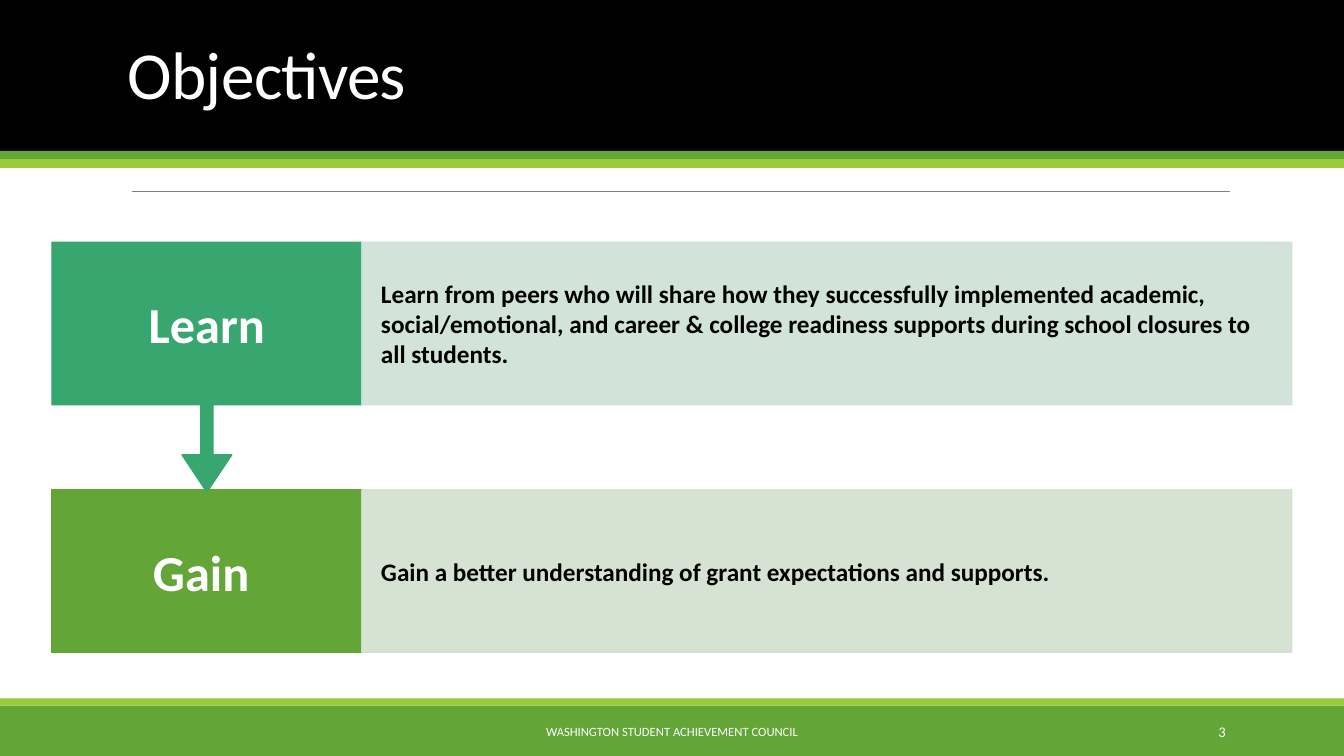
from pptx import Presentation
from pptx import util as u
from pptx.dml.color import RGBColor
from pptx.enum import shapes, text
from pptx.oxml import parse_xml
from pptx.oxml.ns import nsdecls, qn

BLACK, WHITE, GREEN, LIME, TEAL = "000000", "FFFFFF", "63A537", "99CB38", "37A76F"


def rgb(value):
    return RGBColor.from_string(value)


class Deck:
    """Style and current slide; all boxes are percentages of the slide size."""

    font = "Calibri"
    width, height = u.Inches(13.333), u.Inches(7.5)

    def __init__(self):
        self.prs = Presentation()
        self.prs.slide_width, self.prs.slide_height = self.width, self.height
        self.s = self.prs.slides.add_slide(self.prs.slide_layouts[5])

    def box(self, x, y, w, h):
        return [int(share * side / 100) for share, side in
                zip((x, y, w, h), (self.width, self.height) * 2)]

    def set_text(self, shape, words, size, color=WHITE, bold=False,
                 align="LEFT", inset=(0.1, 0.05), **spacing):
        tf = shape.text_frame
        frame = {"word_wrap": True, "auto_size": text.MSO_AUTO_SIZE.NONE,
                 "vertical_anchor": text.MSO_ANCHOR.MIDDLE,
                 "margin_left": u.Inches(inset[0]), "margin_right": u.Inches(inset[0]),
                 "margin_top": u.Inches(inset[1]), "margin_bottom": u.Inches(inset[1])}
        for name, value in frame.items():
            setattr(tf, name, value)
        p = tf.paragraphs[0]
        for name, value in {"alignment": getattr(text.PP_ALIGN, align), **spacing}.items():
            setattr(p, name, value)
        r = p.add_run()
        r.text = words
        for name, value in {"name": self.font, "size": u.Pt(size), "bold": bold}.items():
            setattr(r.font, name, value)
        r.font.color.rgb = rgb(color)
        return r

    def shape(self, place, color, kind="RECTANGLE", line=0, opacity=100):
        sp = self.s.shapes.add_shape(getattr(shapes.MSO_SHAPE, kind), *self.box(*place))
        sp.shadow.inherit = False
        sp.fill.solid()
        sp.fill.fore_color.rgb = rgb(color)
        if line:
            sp.line.width = u.Pt(line)
            sp.line.color.rgb = rgb(color)
        else:
            sp.line.fill.background()
        if opacity < 100:
            for clr in sp._element.spPr.iter(qn("a:srgbClr")):
                clr.append(parse_xml(f'<a:alpha {nsdecls("a")} val="{opacity * 1000}"/>'))
        return sp

    def rule(self, x1, x2, y, color, weight):
        left, top, right, _ = self.box(x1, y, x2, y)
        line = self.s.shapes.add_connector(shapes.MSO_CONNECTOR.STRAIGHT, left, top, right, top)
        line.line.color.rgb = rgb(color)
        line.line.width = u.Pt(weight)
        line._element.spPr.append(parse_xml(f'<a:effectLst {nsdecls("a")}/>'))

    def title(self, place, words, size):
        sp = self.s.shapes.title
        sp.left, sp.top, sp.width, sp.height = self.box(*place)
        r = self.set_text(sp, words, size, line_spacing=0.85)
        r._r.get_or_add_rPr().set("spc", "-50")
        self.s.shapes._spTree.append(sp._element)  # in front of the header band

    def label(self, place, words, size, align):
        self.set_text(self.s.shapes.add_textbox(*self.box(*place)), words, size, align=align)


def main():
    deck = Deck()

    # Header and footer bands
    for y, h, color in ((93.33, 6.67, GREEN), (92.37, 0.96, LIME), (0, 20.5, BLACK),
                        (19.95, 1.16, GREEN), (21.05, 1.16, LIME)):
        deck.shape((0, y, 100, h), color)
    deck.rule(9.82, 91.54, 25.3, "808080", 0.5)
    deck.title((8.75, 1.73, 82.5, 17.33), "Objectives", 48)
    deck.label((30.23, 94.13, 39.53, 5.33), "WASHINGTON STUDENT ACHIEVEMENT COUNCIL", 9, "CENTER")
    deck.label((81.25, 94.13, 10.7, 5.33), "3", 10.5, "RIGHT")

    # Objectives, bottom row first so that the arrow overlaps it
    left, name_w, detail_w, row_h, arrow_h = 3.87, 23.05, 69.2, 21.5, 33.07
    rows = (
        (64.8, row_h, "RECTANGLE", GREEN, "D3E1CE", "Gain ",
         "Gain a better understanding of grant expectations and supports."),
        (32.05, arrow_h, "DOWN_ARROW_CALLOUT", TEAL, "CEE1D5", "Learn",
         "Learn from peers who will share how they successfully implemented academic, "
         "social/emotional, and career & college readiness supports during school "
         "closures to all students."),
    )
    for y, h, kind, color, tint, name, detail in rows:
        sp = deck.shape((left, y, name_w, h), color, kind, line=0.85)
        if kind == "DOWN_ARROW_CALLOUT":
            for i, share in enumerate((0.05, 0.1, 0.15, 0.65)):
                sp.adjustments[i] = share
        deck.set_text(sp, name, 36, bold=True, align="CENTER", inset=(0.22, 0.28))
        sp = deck.shape((left + name_w, y, detail_w, row_h), tint, line=0.85, opacity=90)
        deck.set_text(sp, detail, 18, BLACK, bold=True, inset=(0.19, 0.25))

    deck.prs.save("out.pptx")


if __name__ == "__main__":
    main()
